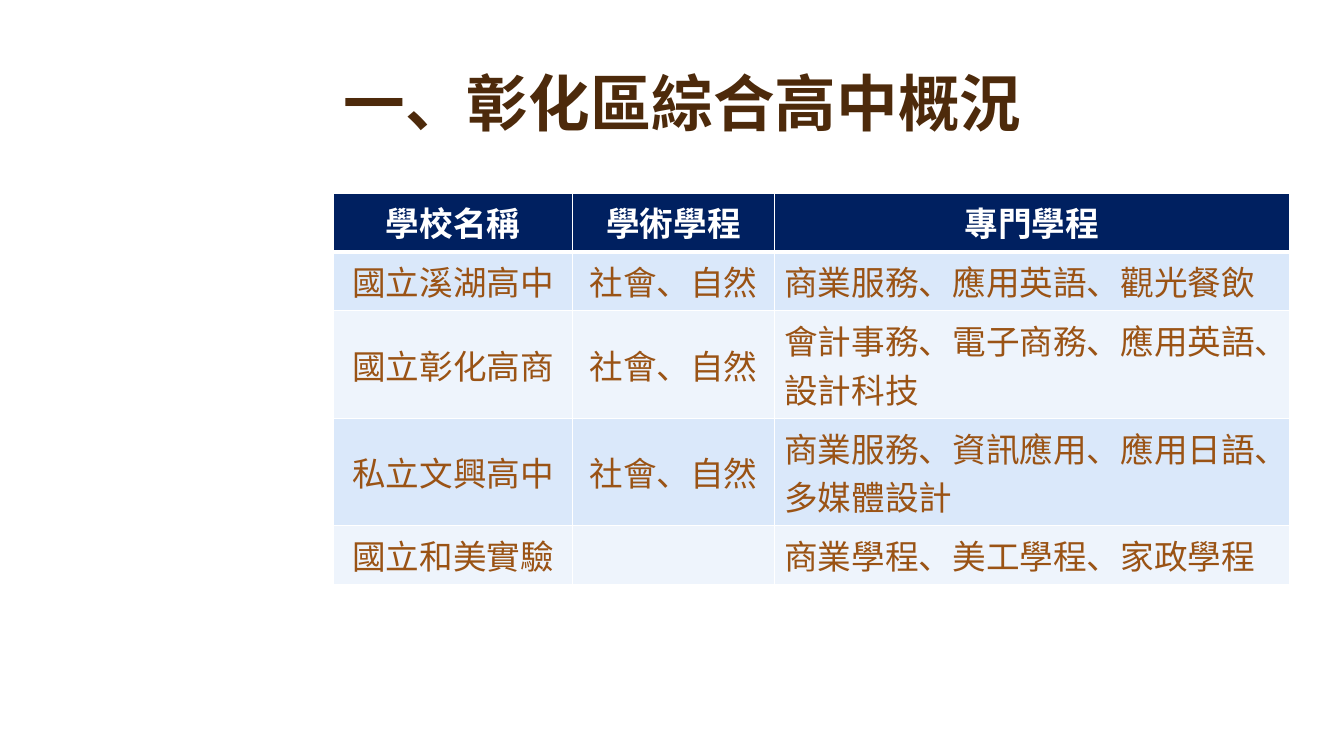
from dataclasses import dataclass

from pptx import Presentation
from pptx.dml import color
from pptx.enum import text
from pptx.oxml import ns, xmlchemy
from pptx.util import Pt


@dataclass(frozen=True)
class Theme:
    font: str = "Noto Sans CJK TC"
    title_size: int = 44
    table_size: int = 24
    title: str = "4D2A0B"
    body: str = "9A5315"
    white: str = "FFFFFF"
    header_fill: str = "002060"
    bands: tuple = ("DAE8FA", "EEF4FC")


THEME = Theme()
LEFT, MIDDLE = text.PP_ALIGN.LEFT, text.MSO_ANCHOR.MIDDLE
CENTER = text.PP_ALIGN.CENTER
COLUMN_WIDTHS = (170.8, 144, 367.9)
ROW_HEIGHTS = {1: 41.5, 2: 76.5}
PROGRAMS = (
    ("學校名稱", "學術學程", "專門學程"),
    ("國立溪湖高中", "社會、自然", "商業服務、應用英語、觀光餐飲"),
    ("國立彰化高商", "社會、自然", "會計事務、電子商務、應用英語、\n設計科技"),
    ("私立文興高中", "社會、自然", "商業服務、資訊應用、應用日語、\n多媒體設計"),
    ("國立和美實驗", "", "商業學程、美工學程、家政學程"),
)


def set_attributes(target, values):
    for name, value in values.items():
        setattr(target, name, value)


def write_text(tf, content, align, size, rgb, bold):
    tf.text = content
    for p in tf.paragraphs:
        p.alignment = align
        for r in p.runs:
            set_attributes(r.font, {"name": THEME.font, "size": Pt(size), "bold": bold})
            r.font.color.rgb = color.RGBColor.from_string(rgb)
            ea = xmlchemy.OxmlElement("a:ea")
            ea.set("typeface", THEME.font)
            r.font._element.find(ns.qn("a:latin")).addnext(ea)


def add_borders(cell, widths):
    tc_pr = cell._tc.get_or_add_tcPr()
    for side, width in widths.items():
        line = xmlchemy.OxmlElement(f"a:ln{side}")
        line.set("w", str(Pt(width)))
        fill = xmlchemy.OxmlElement("a:solidFill")
        rgb = xmlchemy.OxmlElement("a:srgbClr")
        rgb.set("val", THEME.white)
        fill.append(rgb)
        line.append(fill)
        tc_pr.append(line)


def format_cell(cell, content, row, column):
    header = row == 0
    add_borders(cell, {"L": 1, "R": 1, "T": 3 if row == 1 else 1, "B": 3 if header else 1})
    fill = THEME.header_fill if header else THEME.bands[(row - 1) % 2]
    cell.fill.solid()
    cell.fill.fore_color.rgb = color.RGBColor.from_string(fill)
    cell.vertical_anchor = MIDDLE
    if content:
        align = CENTER if header or column < 2 else LEFT
        rgb = THEME.white if header else THEME.body
        write_text(cell.text_frame, content, align, THEME.table_size, rgb, header)


def add_title(s, content):
    sp = s.shapes.title
    set_attributes(sp, {"left": Pt(238.3), "top": Pt(39.6), "width": Pt(609.1), "height": Pt(64.1)})
    tf = sp.text_frame
    set_attributes(tf, {"word_wrap": True, "vertical_anchor": text.MSO_ANCHOR.BOTTOM})
    write_text(tf, content, LEFT, THEME.title_size, THEME.title, True)
    tf.paragraphs[0].line_spacing = 0.9


def add_program_table(s, rows):
    heights = [ROW_HEIGHTS[max(len(c.split("\n")) for c in row)] for row in rows]
    table = s.shapes.add_table(
        len(rows), len(COLUMN_WIDTHS), Pt(238.3), Pt(137.8),
        Pt(sum(COLUMN_WIDTHS)), Pt(sum(heights)),
    ).table
    for column, width in zip(table.columns, COLUMN_WIDTHS):
        column.width = Pt(width)
    for i, (row, height) in enumerate(zip(rows, heights)):
        table.rows[i].height = Pt(height)
        for j, content in enumerate(row):
            format_cell(table.cell(i, j), content, i, j)


def main():
    prs = Presentation()
    set_attributes(prs, {"slide_width": Pt(960), "slide_height": Pt(540)})
    s = prs.slides.add_slide(prs.slide_layouts.get_by_name("Title Only"))
    add_title(s, "一、彰化區綜合高中概況")
    add_program_table(s, PROGRAMS)
    prs.save("out.pptx")


if __name__ == "__main__":
    main()
